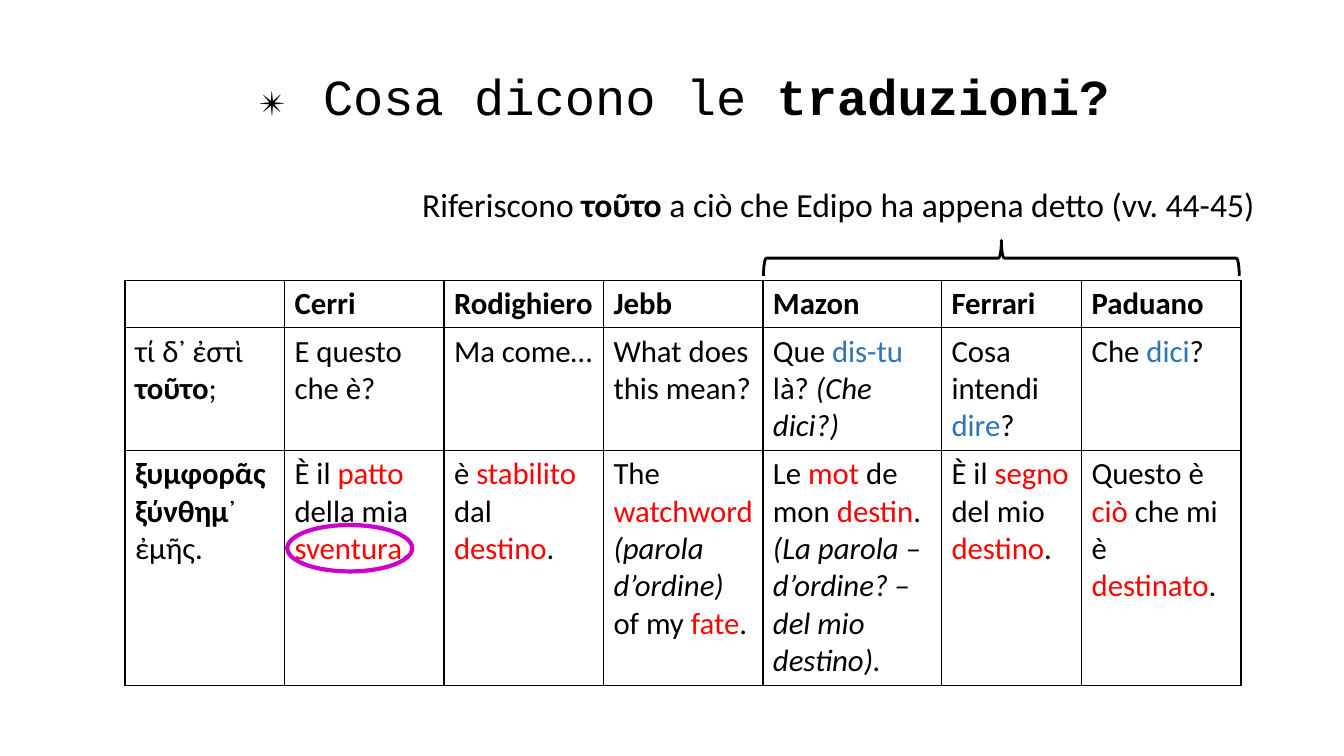
"""Build a slide comparing seven renderings of two Greek phrases."""
from lxml import etree
from pptx import Presentation
from pptx.dml.color import RGBColor
from pptx.enum.shapes import MSO_SHAPE
from pptx.enum.text import MSO_ANCHOR, PP_ALIGN
from pptx.oxml.ns import qn
from pptx.util import Cm, Pt

BLACK = RGBColor(0x00, 0x00, 0x00)
RED = RGBColor(0xFF, 0x00, 0x00)
BLUE = RGBColor(0x2E, 0x75, 0xB6)
PURPLE = RGBColor(0xCC, 0x00, 0xCC)
CENTER = PP_ALIGN.CENTER
MIDDLE = MSO_ANCHOR.MIDDLE
LEFT_BRACE = MSO_SHAPE.LEFT_BRACE
OVAL = MSO_SHAPE.OVAL

PLAIN = {"bold": False, "italic": False}
BOLD = {"bold": True}
ITALIC = {"italic": True}
DESTINY = {"color": RED}
SPEECH = {"color": BLUE}


def write_runs(paragraph, pieces, **base):
    for text, style in pieces:
        run = paragraph.add_run()
        run.text = text
        values = {**PLAIN, "color": BLACK, **base, **style}
        run.font.color.rgb = values.pop("color")
        for attribute, value in values.items():
            setattr(run.font, attribute, value)


def draw_outline(shapes, preset, place, color, width):
    outline = shapes.add_shape(preset, *map(Cm, place))
    outline.shadow.inherit = False
    outline.fill.background()
    outline.line.color.rgb = color
    outline.line.width = Pt(width)
    return outline


prs = Presentation()
prs.slide_width, prs.slide_height = Cm(33.87), Cm(19.05)
slide = prs.slides.add_slide(prs.slide_layouts[5])

title = slide.shapes.title
title_place = {"left": 2.26, "top": 0.58, "width": 29.95, "height": 3.68}
for side, length in title_place.items():
    setattr(title, side, Cm(length))
title.text_frame.vertical_anchor = MIDDLE
heading = title.text_frame.paragraphs[0]
heading.alignment = CENTER
heading.line_spacing = 0.9
write_runs(heading, [
    ("✴", {"size": Pt(24)}),
    (" ", {"size": Pt(44)}),
    ("Cosa dicono le ", {}),
    ("traduzioni?", BOLD),
], name="Courier New", size=Pt(36))

translators = ["Cerri", "Rodighiero", "Jebb", "Mazon", "Ferrari", "Paduano"]
question = [
    [("τί δ᾽ ἐστὶ ", {}), ("τοῦτο", BOLD), (";", {})],
    [("E questo che è?", {})],
    [("Ma come…", {})],
    [("What does this mean?", {})],
    [("Que ", {}), ("dis-tu ", SPEECH), ("là? ", {}), ("(Che dici?)", ITALIC)],
    [("Cosa intendi ", {}), ("dire", SPEECH), ("?", {})],
    [("Che ", {}), ("dici", SPEECH), ("?", {})],
]
answer = [
    [("ξυμφορᾶς ξύνθημ", BOLD), ("᾽ ἐμῆς.", {})],
    [("È il ", {}), ("patto", DESTINY), (" della mia ", {}),
     ("sventura", DESTINY), (".", {})],
    [("è ", {}), ("stabilito", DESTINY), (" dal ", {}),
     ("destino", DESTINY), (".", {})],
    [("The ", {}), ("watchword ", DESTINY), ("(parola d’ordine) ", ITALIC),
     ("of my ", {}), ("fate", DESTINY), (".", {})],
    [("Le ", {}), ("mot ", DESTINY), ("de mon ", {}), ("destin", DESTINY),
     (". ", {}), ("(La parola –d’ordine?  ̶  del mio destino).", ITALIC)],
    [("È il ", {}), ("segno", DESTINY), (" del mio ", {}),
     ("destino", DESTINY), (".", {})],
    [("Questo è ", {}), ("ciò", DESTINY), (" che mi è ", {}),
     ("destinato", DESTINY), (".", {})],
]
header = [[]] + [[(translator, BOLD)] for translator in translators]
column_widths = [4.02, 4.02, 4.02, 4.02, 4.5, 3.53, 4.02]
row_heights = [1.12, 3.08, 5.92]

translations = slide.shapes.add_table(
    len(row_heights), len(column_widths), Cm(3.15), Cm(7.06),
    Cm(sum(column_widths)), Cm(sum(row_heights))).table
translations.first_row = False
translations.horz_banding = False
for column, width in zip(translations.columns, column_widths):
    column.width = Cm(width)
for row, height, phrases in zip(translations.rows, row_heights,
                                [header, question, answer]):
    row.height = Cm(height)
    for cell, pieces in zip(row.cells, phrases):
        write_runs(cell.text_frame.paragraphs[0], pieces,
                   name="Calibri", size=Pt(22))
        properties = cell._tc.get_or_add_tcPr()
        for edge in ("a:lnL", "a:lnR", "a:lnT", "a:lnB"):
            border = etree.SubElement(properties, qn(edge), w=str(Pt(1)))
            ink = etree.SubElement(border, qn("a:solidFill"))
            etree.SubElement(ink, qn("a:srgbClr"), val=str(BLACK))
        cell.fill.background()

remark = slide.shapes.add_group_shape()
brace = draw_outline(remark.shapes, LEFT_BRACE,
                     (24.79, 0.51, 0.89, 11.99), BLACK, 2)
brace.rotation = 90
reference = remark.shapes.add_textbox(Cm(10.39), Cm(4.52), Cm(21.67), Cm(1.27))
reference.text_frame.word_wrap = True
write_runs(reference.text_frame.paragraphs[0], [
    ("Riferiscono ", {}),
    ("τοῦτο", BOLD),
    (" a ciò che Edipo ha appena detto (vv. 44-45)", {}),
], name="Calibri", size=Pt(24))

draw_outline(slide.shapes, OVAL, (7.24, 13.23, 3.15, 1.17), PURPLE, 3)

prs.save("out.pptx")
